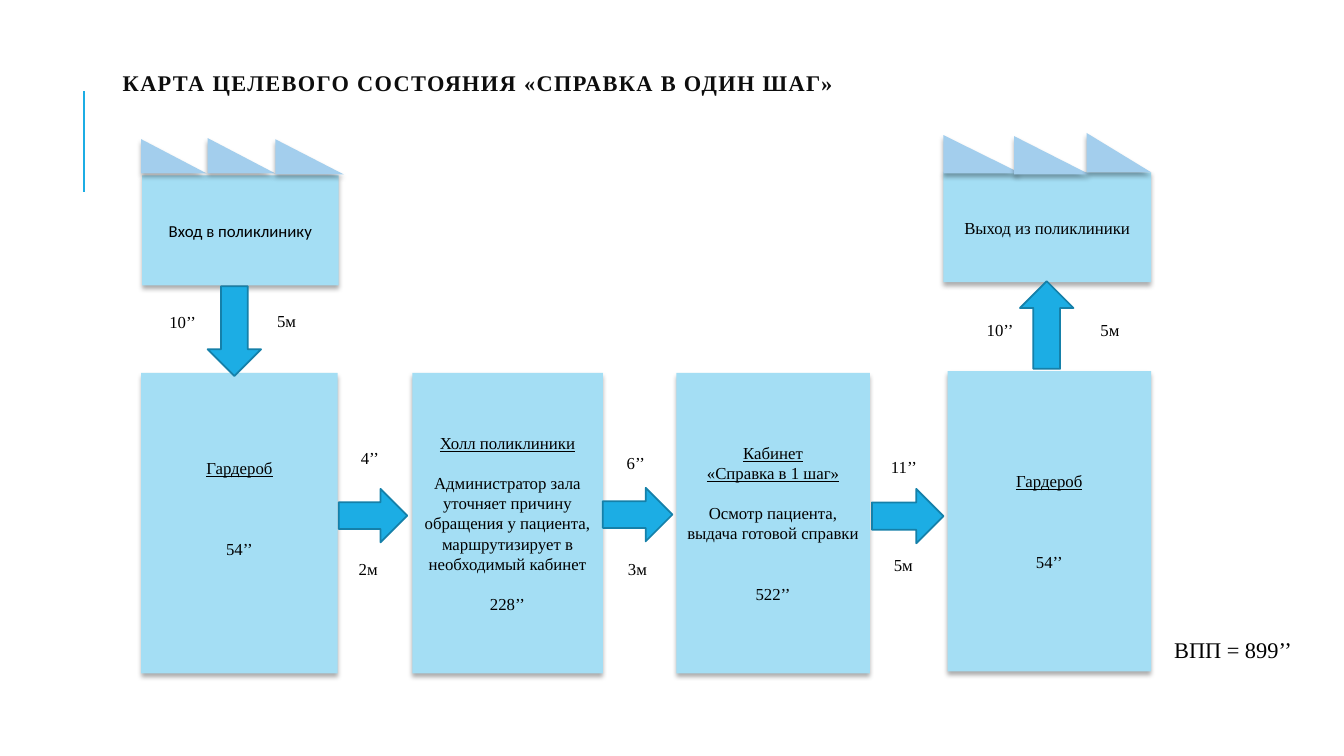
from lxml import etree
from pptx import Presentation
from pptx import util as u
from pptx.dml.color import RGBColor
from pptx.enum import shapes, text
from pptx.oxml import ns, parse_xml

Pt = u.Pt
SHAPE = shapes.MSO_SHAPE
SERIF = "Times New Roman"
COLORS = {"box": "A4DEF4", "roof": "A3CEED", "accent": "1CADE4",
          "arrow_line": "1580A9", "title": "0D0D0D", "text": "000000"}
SHADOW = (f'<a:effectLst {ns.nsdecls("a")}>'
          '<a:outerShdw blurRad="44450" dist="27940" dir="5400000" algn="ctr" rotWithShape="0">'
          '<a:srgbClr val="000000"><a:alpha val="32000"/></a:srgbClr>'
          '</a:outerShdw></a:effectLst>')


def add_block(kind, bounds, color, shadow=True):
    shape = slide.shapes.add_shape(kind, *[Pt(value) for value in bounds])
    shape.fill.solid()
    shape.fill.fore_color.rgb = RGBColor.from_string(COLORS[color])
    if shadow:
        shape.line.fill.background()
        shape._element.spPr.append(parse_xml(SHADOW))
    else:
        shape.shadow.inherit = False
        shape.line.color.rgb = RGBColor.from_string(COLORS["arrow_line"])
        shape.line.width = Pt(1.25)
    return shape


def style(paragraph, wording, size=12, font=SERIF, color="text"):
    paragraph.text = wording
    paragraph.font.size = Pt(size)
    paragraph.font.name = font
    paragraph.font.color.rgb = RGBColor.from_string(COLORS[color])


presentation = Presentation()
presentation.slide_width, presentation.slide_height = Pt(960), Pt(540)
slide = presentation.slides.add_slide(presentation.slide_layouts[6])

# Accent line beside the title
accent = slide.shapes.add_connector(shapes.MSO_CONNECTOR.STRAIGHT,
                                    Pt(60), Pt(136.8), Pt(60), Pt(65))
accent.line.color.rgb = RGBColor.from_string(COLORS["accent"])
accent.line.width = Pt(1.5)
etree.SubElement(accent._element.spPr, ns.qn("a:effectLst"))

# Title
title = slide.shapes.add_textbox(Pt(80.6), Pt(46), Pt(765.4), Pt(29.5))
title.text_frame.word_wrap = True
title.text_frame.vertical_anchor = text.MSO_ANCHOR.MIDDLE
heading = title.text_frame.paragraphs[0]
style(heading, "КАРТА ЦЕЛЕВОГО СОСТОЯНИЯ «СПРАВКА В ОДИН ШАГ»", 16, color="title")
heading.font.bold = True
heading.line_spacing = 0.8
heading.runs[0]._r.get_or_add_rPr().set("spc", "100")

# Stations: bounds, font, extra bottom inset, lines as (wording, underlined, space before)
wardrobe = [("Гардероб", True, 0), ("54’’", False, 43.2)]
stations = [
    ((100.8, 266.4, 140.4, 214.6), SERIF, 21.6, wardrobe),
    ((294.5, 266.4, 136.1, 214.6), SERIF, 0, [
        ("Холл поликлиники", True, 0),
        ("Администратор зала", False, 14.4),
        ("уточняет причину обращения у пациента, маршрутизирует в необходимый кабинет", False, 0),
        ("228’’", False, 14.4)]),
    ((483.1, 266.4, 138.2, 214.6), SERIF, 0, [
        ("Кабинет", True, 0),
        ("«Справка в 1 шаг»", True, 0),
        ("Осмотр пациента, выдача готовой справки", False, 14.4),
        ("522’’", False, 28.8)]),
    ((676.8, 265, 145.4, 214.6), SERIF, 0, wardrobe),
    ((101.5, 125.3, 140.4, 78.5), "Calibri", 0, [("Вход в поликлинику", False, 0)]),
    ((673.9, 123.1, 148.3, 78.5), SERIF, 0, [("Выход из поликлиники", False, 0)]),
]
for bounds, font, inset, lines in stations:
    frame = add_block(SHAPE.RECTANGLE, bounds, "box").text_frame
    frame.word_wrap = True
    frame.vertical_anchor = text.MSO_ANCHOR.MIDDLE
    frame.margin_bottom = Pt(3.6 + inset)
    for index, (wording, underlined, gap) in enumerate(lines):
        paragraph = frame.add_paragraph() if index else frame.paragraphs[0]
        style(paragraph, wording, font=font)
        paragraph.font.underline = underlined
        paragraph.alignment = text.PP_ALIGN.CENTER
        paragraph.space_before = Pt(gap)

# Saw-tooth roofs over entrance and exit
for bounds in [(100.8, 99.4, 46.8, 24.5), (148.3, 98.6, 48.2, 25.2), (196.6, 99.4, 49, 25.2),
               (673.9, 96.5, 55.4, 27.4), (724.3, 97.2, 54, 27.4), (776.2, 95, 46.1, 28.1)]:
    add_block(SHAPE.RIGHT_TRIANGLE, bounds, "roof")

# Route arrows
for kind, bounds in [(SHAPE.DOWN_ARROW, (148.3, 204.5, 38.2, 64.1)),
                     (SHAPE.UP_ARROW, (728.6, 200.9, 38.2, 62.6)),
                     (SHAPE.RIGHT_ARROW, (241.9, 349.2, 49, 38.2)),
                     (SHAPE.RIGHT_ARROW, (430.6, 348.5, 49.7, 38.2)),
                     (SHAPE.RIGHT_ARROW, (622.8, 349.2, 51.1, 38.9))]:
    add_block(kind, bounds, "accent", shadow=False)

# Times and distances along the route, then the total
labels = [("10’’", 113.8, 218.9), ("5м", 190.8, 218.2), ("10’’", 697.7, 224.6),
          ("5м", 779, 224.6), ("4’’", 250.6, 316.1), ("2м", 249.1, 395.3),
          ("6’’", 440.6, 319.7), ("3м", 441.4, 395.3), ("11’’", 629.3, 322.6),
          ("5м", 631.4, 392.4), ("ВПП = 899’’", 831.6, 450.7)]
for wording, left, top in labels:
    total = wording.startswith("ВПП")
    label = slide.shapes.add_textbox(Pt(left), Pt(top), Pt(110 if total else 40),
                                     Pt(26.6 if total else 21.6))
    label.text_frame.word_wrap = True
    style(label.text_frame.paragraphs[0], wording, 16 if total else 12)

presentation.save("out.pptx")
